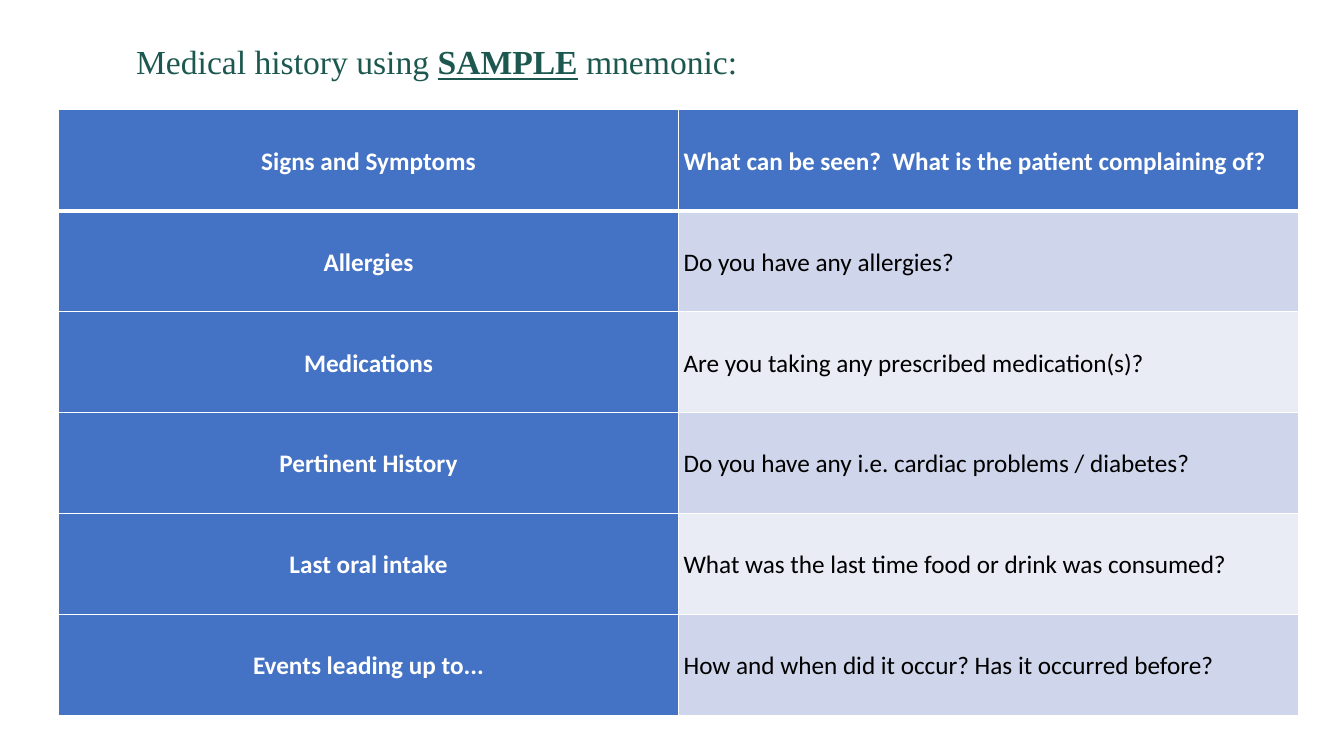
from lxml.etree import SubElement
from pptx import Presentation
from pptx.dml.color import RGBColor
from pptx.enum.text import MSO_ANCHOR, MSO_AUTO_SIZE, PP_ALIGN
from pptx.oxml.ns import qn
from pptx.util import Inches, Pt

WHITE, BLACK, BLUE, GREEN = "FFFFFF", "000000", "4472C4", "1C584F"
BANDS = ("CFD5EA", "E9EBF5")

TITLE_RUNS = [
    ("Medical history using ", {}),
    ("SAMPLE", {"bold": True, "underline": True}),
    (" mnemonic:", {}),
]
SAMPLE_ROWS = [
    ("Signs and Symptoms", "What can be seen?  What is the patient complaining of?"),
    ("Allergies", "Do you have any allergies?"),
    ("Medications", "Are you taking any prescribed medication(s)?"),
    ("Pertinent History", "Do you have any i.e. cardiac problems / diabetes?"),
    ("Last oral intake", "What was the last time food or drink was consumed?"),
    ("Events leading up to...", "How and when did it occur? Has it occurred before?"),
]


def rgb(value):
    return RGBColor.from_string(value)


def set_attrs(obj, values):
    for name, value in values.items():
        setattr(obj, name, value)


def add_run(p, text, color, **font):
    r = p.add_run()
    r.text = text
    set_attrs(r.font, font)
    r.font.color.rgb = rgb(color)


def set_borders(cell, widths):
    """Draw white cell borders; widths maps L, R, T, B to points."""
    tcPr = cell._tc.get_or_add_tcPr()
    for side, width in widths.items():
        ln = SubElement(tcPr, qn(f"a:ln{side}"), w=str(Pt(width)))
        fill = SubElement(ln, qn("a:solidFill"))
        SubElement(fill, qn("a:srgbClr"), val=WHITE)


def add_title(slide, left, top, width, height):
    sp = slide.shapes.title
    set_attrs(sp, {"left": Inches(left), "top": Inches(top),
                   "width": Inches(width), "height": Inches(height)})
    tf = sp.text_frame
    set_attrs(tf, {"word_wrap": True, "auto_size": MSO_AUTO_SIZE.NONE,
                   "vertical_anchor": MSO_ANCHOR.TOP, "margin_top": Inches(0.08)})
    p = tf.paragraphs[0]
    p.alignment = PP_ALIGN.LEFT
    for text, font in TITLE_RUNS:
        add_run(p, text, GREEN, name="Times New Roman", size=Pt(24), **font)


def add_sample_table(slide, left, top, width, height):
    """Place the table with a header row and a header column."""
    table = slide.shapes.add_table(
        len(SAMPLE_ROWS), 2, Inches(left), Inches(top), Inches(width), Inches(height)
    ).table
    table.first_col = True
    for i, texts in enumerate(SAMPLE_ROWS):
        for j, text in enumerate(texts):
            cell = table.cell(i, j)
            heading = i == 0 or j == 0
            set_borders(cell, {"L": 1, "R": 1, "T": 3 if i == 1 else 1,
                               "B": 3 if i == 0 else 1})
            cell.fill.solid()
            cell.fill.fore_color.rgb = rgb(BLUE if heading else BANDS[(i - 1) % 2])
            cell.vertical_anchor = MSO_ANCHOR.MIDDLE
            for side in ("left", "right", "top", "bottom"):
                setattr(cell, f"margin_{side}", Inches(0.05))
            p = cell.text_frame.paragraphs[0]
            set_attrs(p, {"line_spacing": 1.07,
                          "alignment": PP_ALIGN.LEFT if j else PP_ALIGN.CENTER})
            add_run(p, text, WHITE if heading else BLACK,
                    name="Calibri", size=Pt(18), bold=heading)


def main():
    prs = Presentation()
    set_attrs(prs, {"slide_width": Inches(13.33), "slide_height": Inches(7.5)})
    slide = prs.slides.add_slide(prs.slide_layouts.get_by_name("Title Only"))
    add_title(slide, 1.25, 0.33, 6.94, 1.11)
    add_sample_table(slide, 0.58, 1.09, 12.3, 6.01)
    prs.save("out.pptx")


if __name__ == "__main__":
    main()
